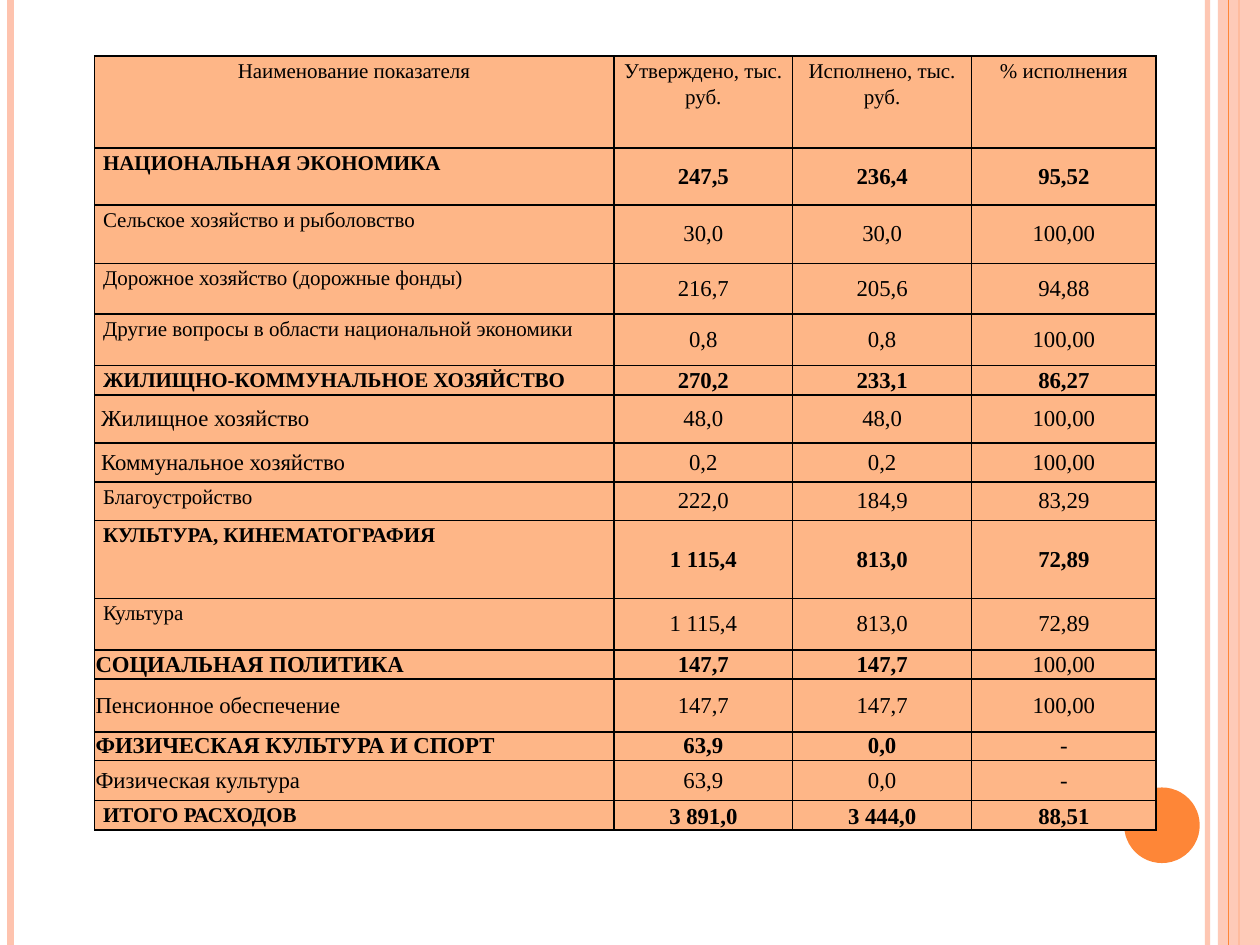
from lxml import etree
from pptx import Presentation
from pptx.dml.color import RGBColor
from pptx.enum import shapes, text
from pptx.oxml import ns
from pptx.util import Pt

FONT = "Times New Roman"
BLACK, PEACH, PINK, ORANGE = "000000", "FEB687", "FEC3AE", "FE8637"
WIDTH, HEIGHT = 720, 540
COLUMN_WIDTHS = [296.8, 102.2, 102.2, 105.5]
HEADER_HEIGHT = 52.6
HEADINGS = ["Наименование показателя", "Утверждено, тыс. руб.",
            "Исполнено, тыс. руб.", "% исполнения"]

# Label styles: size, left inset, anchor, alignment, line spacing
TOP, MIDDLE, BOTTOM = (text.MSO_ANCHOR.TOP, text.MSO_ANCHOR.MIDDLE,
                       text.MSO_ANCHOR.BOTTOM)
LEFT, CENTER, JUSTIFY = (text.PP_ALIGN.LEFT, text.PP_ALIGN.CENTER,
                         text.PP_ALIGN.JUSTIFY)
LABEL_STYLES = {
    "upper": (12, 4.9, TOP, JUSTIFY, 1.15),
    "indented": (13, 3.8, MIDDLE, LEFT, 1),
    "flush": (13, 0.6, MIDDLE, LEFT, 1),
}

# Row height, label style, label, approved, executed, percent
BUDGET = [
    (32.6, "upper", "НАЦИОНАЛЬНАЯ ЭКОНОМИКА", "247,5", "236,4", "95,52"),
    (33.4, "upper", "Сельское хозяйство и рыболовство", "30,0", "30,0", "100,00"),
    (28.8, "upper", "Дорожное хозяйство (дорожные фонды)", "216,7", "205,6", "94,88"),
    (29.6, "upper", "Другие вопросы в области национальной экономики",
     "0,8", "0,8", "100,00"),
    (16.8, "upper", "ЖИЛИЩНО-КОММУНАЛЬНОЕ ХОЗЯЙСТВО", "270,2", "233,1", "86,27"),
    (27.4, "indented", "Жилищное хозяйство", "48,0", "48,0", "100,00"),
    (22.2, "indented", "Коммунальное хозяйство", "0,2", "0,2", "100,00"),
    (22, "upper", "Благоустройство", "222,0", "184,9", "83,29"),
    (44.6, "upper", "КУЛЬТУРА, КИНЕМАТОГРАФИЯ", "1 115,4", "813,0", "72,89"),
    (29.6, "upper", "Культура", "1 115,4", "813,0", "72,89"),
    (16.4, "flush", "СОЦИАЛЬНАЯ ПОЛИТИКА", "147,7", "147,7", "100,00"),
    (30.4, "flush", "Пенсионное обеспечение", "147,7", "147,7", "100,00"),
    (16.4, "flush", "ФИЗИЧЕСКАЯ КУЛЬТУРА И СПОРТ", "63,9", "0,0", "-"),
    (22.8, "flush", "Физическая культура", "63,9", "0,0", "-"),
    (16.8, "upper", "ИТОГО РАСХОДОВ", "3 891,0", "3 444,0", "88,51"),
]


def rgb(color):
    return RGBColor.from_string(color)


def set_opacity(element, percent):
    for color in element.iter(ns.qn("a:srgbClr")):
        etree.SubElement(color, ns.qn("a:alpha"), val=str(percent * 1000))


def add_stripe(slide, x, color, weight, opacity=100):
    stripe = slide.shapes.add_connector(
        shapes.MSO_CONNECTOR.STRAIGHT, Pt(x), Pt(0), Pt(x), Pt(HEIGHT))
    stripe.line.color.rgb = rgb(color)
    stripe.line.width = Pt(weight)
    properties = stripe._element.spPr
    if opacity < 100:
        set_opacity(properties, opacity)
    etree.SubElement(properties, ns.qn("a:effectLst"))


def add_plain_shape(slide, kind, left, top, width, height, color, opacity=100):
    shape = slide.shapes.add_shape(kind, Pt(left), Pt(top), Pt(width), Pt(height))
    shape.shadow.inherit = False
    shape.fill.solid()
    shape.fill.fore_color.rgb = rgb(color)
    shape.line.fill.background()
    if opacity < 100:
        set_opacity(shape._element.spPr, opacity)


def add_borders(cell):
    properties = cell._tc.get_or_add_tcPr()
    for side in ("lnL", "lnR", "lnT", "lnB"):
        border = etree.SubElement(properties, ns.qn("a:" + side), w=str(Pt(1)))
        fill = etree.SubElement(border, ns.qn("a:solidFill"))
        etree.SubElement(fill, ns.qn("a:srgbClr"), val=BLACK)


def fill_cell(cell, words, size, inset, anchor, align, spacing, bold=False):
    add_borders(cell)
    cell.fill.solid()
    cell.fill.fore_color.rgb = rgb(PEACH)
    cell.margin_left = cell.margin_right = Pt(inset)
    cell.margin_top = cell.margin_bottom = Pt(0.3 if spacing == 1 else 0)
    cell.vertical_anchor = anchor
    cell.text_frame.text = words
    paragraph = cell.text_frame.paragraphs[0]
    paragraph.alignment = align
    paragraph.line_spacing = float(spacing)
    font = paragraph.runs[0].font
    font.name, font.size, font.bold = FONT, Pt(size), bold
    font.color.rgb = rgb(BLACK)


def add_budget_table(slide):
    heights = [HEADER_HEIGHT] + [row[0] for row in BUDGET]
    table = slide.shapes.add_table(
        len(heights), len(COLUMN_WIDTHS), Pt(54), Pt(32),
        Pt(sum(COLUMN_WIDTHS)), Pt(sum(heights))).table
    for column, width in zip(table.columns, COLUMN_WIDTHS):
        column.width = Pt(width)
    for row, height in zip(table.rows, heights):
        row.height = Pt(height)

    for column, heading in enumerate(HEADINGS):
        fill_cell(table.cell(0, column), heading, 12, 1.4, TOP, CENTER, 1.15)

    for row, (_, style, label, *values) in enumerate(BUDGET, 1):
        section = label.isupper()
        fill_cell(table.cell(row, 0), label, *LABEL_STYLES[style], bold=section)
        anchor = BOTTOM if row == len(BUDGET) else MIDDLE
        for column, value in enumerate(values, 1):
            # Percentages of the flush sections stay regular
            bold = section and not (style == "flush" and column == 3)
            fill_cell(table.cell(row, column), value, 13, 0.6, anchor, CENTER, 1, bold)


def main():
    deck = Presentation()
    deck.slide_width, deck.slide_height = Pt(WIDTH), Pt(HEIGHT)
    slide = deck.slides.add_slide(deck.slide_layouts[6])

    # Side decoration
    add_stripe(slide, 690, PINK, 3, 93)
    add_stripe(slide, 6, PINK, 4.5)
    add_stripe(slide, 708, ORANGE, 1.5)
    add_plain_shape(slide, shapes.MSO_SHAPE.RECTANGLE, 696, 0, 24, HEIGHT, PINK, 87)
    add_stripe(slide, 702, ORANGE, 0.75)
    add_plain_shape(slide, shapes.MSO_SHAPE.OVAL, 642.4, 450, 43.2, 43.2, ORANGE)

    # Budget execution
    add_budget_table(slide)
    deck.save("out.pptx")


if __name__ == "__main__":
    main()
